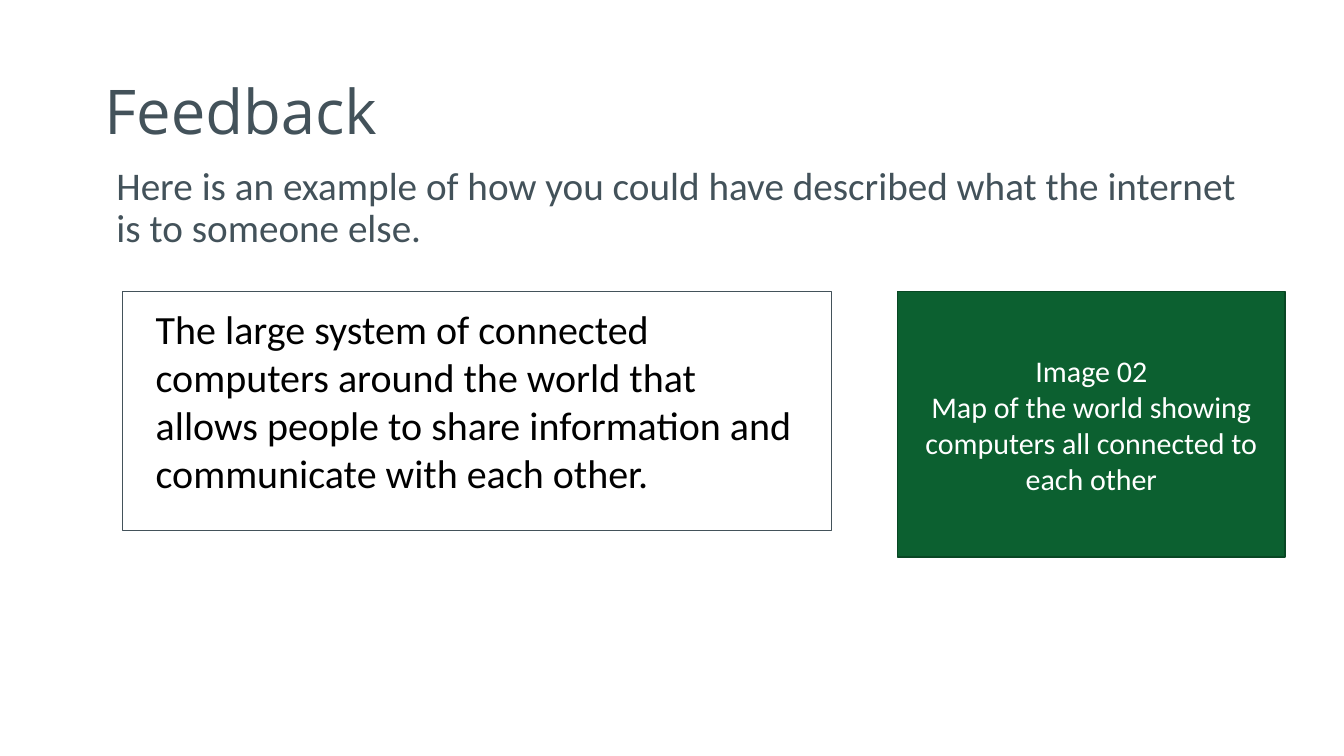
"""Build the feedback slide: a model answer beside a labelled image panel."""
from dataclasses import dataclass

from lxml.etree import SubElement
from pptx import Presentation
from pptx.dml.color import RGBColor
from pptx.enum.shapes import MSO_SHAPE
from pptx.enum.text import MSO_ANCHOR, MSO_AUTO_SIZE, PP_ALIGN
from pptx.oxml.ns import qn
from pptx.util import Inches, Pt

TITLE = ["Feedback"]
INTRO = ["Here is an example of how you could have described what the internet is to someone else."]
ANSWER = [
    "The large system of connected computers around the world that allows "
    "people to share information and communicate with each other."
]
IMAGE_LABEL = ["Image 02", "Map of the world showing computers all connected to each other"]

SLIDE_SIZE = (Inches(11.2), Inches(6.3))
CONTENT_WIDTH = 86.25
PANEL_TOP = 38.57
PLACES = {
    "title": (6.88, 5.4, CONTENT_WIDTH, 19.37),
    "intro": (7.77, 21.27, CONTENT_WIDTH, 63.49),
    "frame": (9.11, PANEL_TOP, 52.77, 31.59),
    "answer": (10.71, 39.52, 49.29, 27.3),
    "image": (66.79, PANEL_TOP, 28.84, 35.08),
}


@dataclass(frozen=True)
class Theme:
    """Colours, fonts and type sizes of the slide."""
    slate: str = "43525A"
    green: str = "0C6030"
    dark_green: str = "094724"
    black: str = "000000"
    white: str = "FFFFFF"
    heading_font: str = "Open Sans"
    body_font: str = "Calibri"
    title_size: float = 37
    intro_size: float = 23.5
    answer_size: float = 24
    label_size: float = 18
    line_width: float = 1


THEME = Theme()


def position(name):
    """Turn percentages of the slide into left, top, width and height."""
    return [round(share / 100 * SLIDE_SIZE[index % 2]) for index, share in enumerate(PLACES[name])]


def place(shape, name):
    """Move a placeholder to its named place."""
    shape.left, shape.top, shape.width, shape.height = position(name)


def write(shape, lines, size, color, font=THEME.body_font, align=PP_ALIGN.LEFT,
          anchor=MSO_ANCHOR.TOP, spacing=None, before=None):
    """Fill a shape with evenly formatted paragraphs."""
    frame = shape.text_frame
    frame.text = "\n".join(lines)
    frame.word_wrap = True
    frame.auto_size = MSO_AUTO_SIZE.NONE
    frame.vertical_anchor = anchor
    for para in frame.paragraphs:
        para.alignment = align
        para.line_spacing = spacing
        para.space_before = before
        para.font.name = font
        para.font.size = Pt(size)
        para.font.color.rgb = RGBColor.from_string(color)


def remove_bullets(shape):
    """Set every paragraph flush left without a bullet."""
    for para in shape.text_frame.paragraphs:
        properties = para._p.get_or_add_pPr()
        properties.set("marL", "0")
        properties.set("indent", "0")
        SubElement(properties, qn("a:buNone"))


def add_panel(slide, name, line, fill=None):
    """Add an outlined rectangle, filled when a colour is given."""
    panel = slide.shapes.add_shape(MSO_SHAPE.RECTANGLE, *position(name))
    panel.shadow.inherit = False
    panel.line.color.rgb = RGBColor.from_string(line)
    panel.line.width = Pt(THEME.line_width)
    if fill:
        panel.fill.solid()
        panel.fill.fore_color.rgb = RGBColor.from_string(fill)
    else:
        panel.fill.background()
    return panel


def main():
    deck = Presentation()
    deck.slide_width, deck.slide_height = SLIDE_SIZE
    slide = deck.slides.add_slide(deck.slide_layouts[1])

    title, intro = slide.placeholders
    place(title, "title")
    write(title, TITLE, THEME.title_size, THEME.slate, font=THEME.heading_font,
          anchor=MSO_ANCHOR.MIDDLE, spacing=0.9)
    place(intro, "intro")
    write(intro, INTRO, THEME.intro_size, THEME.slate, spacing=0.9, before=Pt(8.4))
    remove_bullets(intro)

    add_panel(slide, "frame", THEME.slate)
    answer = slide.shapes.add_textbox(*position("answer"))
    write(answer, ANSWER, THEME.answer_size, THEME.black)

    image = add_panel(slide, "image", THEME.dark_green, THEME.green)
    write(image, IMAGE_LABEL, THEME.label_size, THEME.white,
          align=PP_ALIGN.CENTER, anchor=MSO_ANCHOR.MIDDLE)

    deck.save("out.pptx")


if __name__ == "__main__":
    main()
